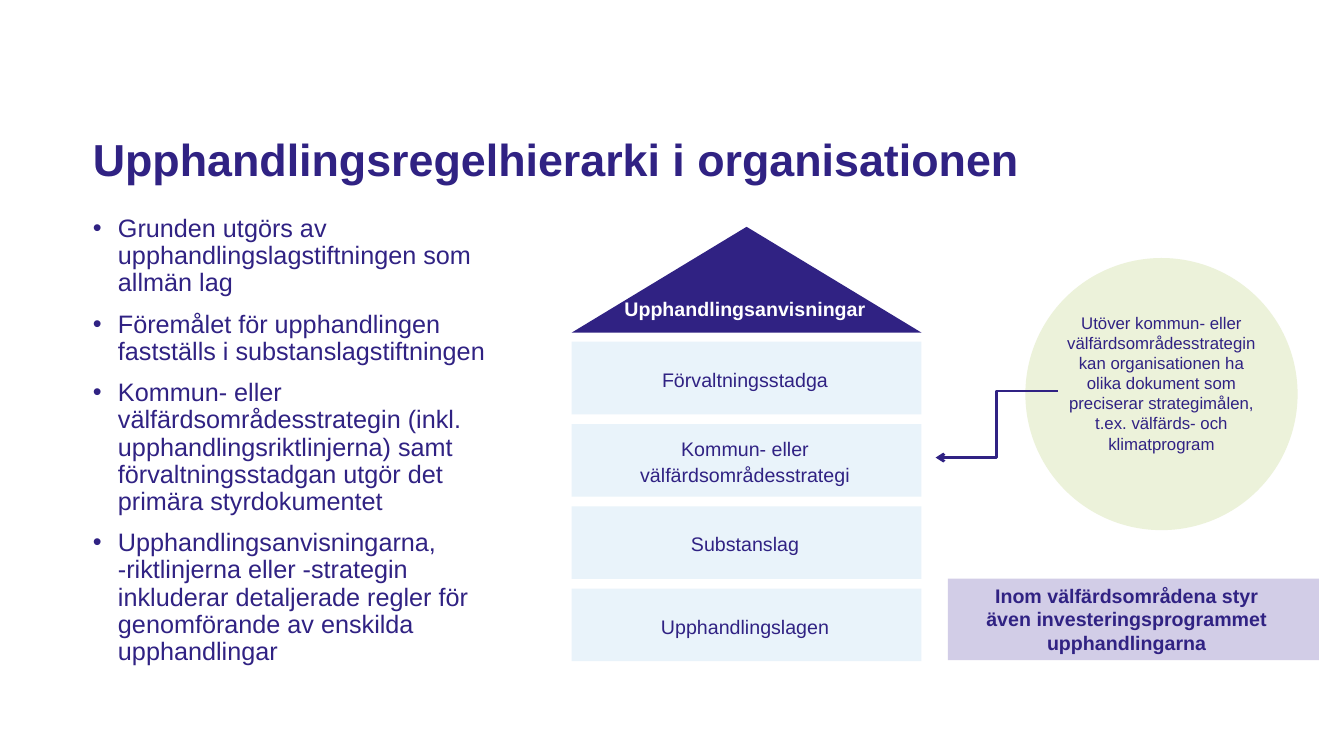
"""Builds a slide showing the hierarchy of procurement rules in an organisation."""
from lxml import etree
from pptx import Presentation
from pptx import util as u
from pptx.dml.color import RGBColor
from pptx.enum import lang, shapes, text
from pptx.oxml.ns import qn

THEME = {
    "font": "Arial", "ink": "302283", "white": "FFFFFF", "tier": "E9F3FA",
    "note": "ECF2DA", "banner": "D2CDE7",
    "title": 32, "body": 18, "label": 14, "small": 12,
}
COLS, ROWS = 1333, 750

prs = Presentation()
prs.slide_width, prs.slide_height = u.Inches(13.33), u.Inches(7.5)
CX, RY = prs.slide_width / COLS, prs.slide_height / ROWS
s = prs.slides.add_slide(prs.slide_layouts[5])


def panel(kind, col, row, cols, rows, color):
    sp = s.shapes.add_shape(kind, int(col * CX), int(row * RY), int(cols * CX), int(rows * RY))
    sp.shadow.inherit = False
    sp.fill.solid()
    sp.fill.fore_color.rgb = RGBColor.from_string(THEME[color])
    sp.line.fill.background()


def write(sp, at, lines, size, frame, para, bold=False, color="ink", bullet=False):
    sp.left, sp.top, sp.width, sp.height = (int(n * k) for n, k in zip(at, (CX, RY, CX, RY)))
    tf = sp.text_frame
    for name, value in {"word_wrap": True, "auto_size": text.MSO_AUTO_SIZE.NONE, **frame}.items():
        setattr(tf, name, value)
    for i, line in enumerate(lines):
        p = tf.add_paragraph() if i else tf.paragraphs[0]
        for name, value in para.items():
            setattr(p, name, value)
        if bullet:
            p.space_before = u.Pt(10 if i else 0)
            pPr = p._p.get_or_add_pPr()
            pPr.set("marL", str(u.Inches(0.25)))
            pPr.set("indent", str(-u.Inches(0.25)))
            etree.SubElement(pPr, qn("a:buFont")).set("typeface", THEME["font"])
            etree.SubElement(pPr, qn("a:buChar")).set("char", "•")
        r = p.add_run()
        r.text = line
        look = {"name": THEME["font"], "size": u.Pt(THEME[size]), "bold": bold,
                "language_id": lang.MSO_LANGUAGE_ID.SWEDISH}
        for name, value in look.items():
            setattr(r.font, name, value)
        r.font.color.rgb = RGBColor.from_string(THEME[color])


SHAPE, ALIGN, ANCHOR = shapes.MSO_SHAPE, text.PP_ALIGN, text.MSO_ANCHOR
flush = dict.fromkeys(("margin_left", "margin_top", "margin_right", "margin_bottom"), 0)
middle = {**flush, "vertical_anchor": ANCHOR.MIDDLE}
grow = {"auto_size": text.MSO_AUTO_SIZE.SHAPE_TO_FIT_TEXT}
tight = {"alignment": ALIGN.LEFT, "line_spacing": 0.9}
loose = {"alignment": ALIGN.CENTER, "line_spacing": 1.1}
centred = {"alignment": ALIGN.CENTER}

write(s.shapes.title, (92, 40, 1150, 145), ["Upphandlingsregelhierarki i organisationen"],
      "title", {**flush, "vertical_anchor": ANCHOR.BOTTOM}, tight, bold=True)

points = [
    "Grunden utgörs av upphandlingslagstiftningen som allmän lag",
    "Föremålet för upphandlingen fastställs i substanslagstiftningen",
    "Kommun- eller välfärdsområdesstrategin (inkl. upphandlingsriktlinjerna) samt "
    "förvaltningsstadgan utgör det primära styrdokumentet",
    "Upphandlingsanvisningarna, -riktlinjerna eller -strategin inkluderar detaljerade "
    "regler för genomförande av enskilda upphandlingar",
]
write(s.shapes.add_textbox(0, 0, 0, 0), (92, 214, 421, 473), points, "body", flush, tight,
      bullet=True)

panel(SHAPE.ISOSCELES_TRIANGLE, 567, 225, 347, 105, "ink")
write(s.shapes.add_textbox(0, 0, 0, 0), (582, 281, 314, 49), ["Upphandlingsanvisningar"],
      "label", middle, loose, bold=True, color="white")

tiers = ["Förvaltningsstadga", "Kommun- eller välfärdsområdesstrategi", "Substanslag",
         "Upphandlingslagen"]
first, last = 339, 584
for i, tier in enumerate(tiers):
    row = first + (last - first) * i / (len(tiers) - 1)
    panel(SHAPE.RECTANGLE, 567, row, 347, 72, "tier")
    write(s.shapes.add_textbox(0, 0, 0, 0), (582, row, 314, 72), [tier], "label", middle, loose)

panel(SHAPE.OVAL, 1017, 256, 270, 270, "note")
write(s.shapes.add_textbox(0, 0, 0, 0), (1044, 305, 216, 172),
      ["Utöver kommun- eller välfärdsområdesstrategin kan organisationen ha olika dokument "
       "som preciserar strategimålen, t.ex. välfärds- och klimatprogram"],
      "small", grow, centred)

panel(SHAPE.RECTANGLE, 940, 574, 368, 81, "banner")
write(s.shapes.add_textbox(0, 0, 0, 0), (957, 574, 321, 81),
      ["Inom välfärdsområdena styr även investeringsprogrammet upphandlingarna"],
      "label", grow, centred, bold=True)

link = s.shapes.add_connector(shapes.MSO_CONNECTOR.ELBOW, int(1049 * CX), int(388 * RY),
                              int(928 * CX), int(454 * RY))
link.line.width = u.Pt(2)
link.line.color.rgb = RGBColor.from_string(THEME["ink"])
etree.SubElement(link.line._get_or_add_ln(), qn("a:tailEnd")).set("type", "arrow")
etree.SubElement(link._element.spPr, qn("a:effectLst"))

prs.save("out.pptx")
